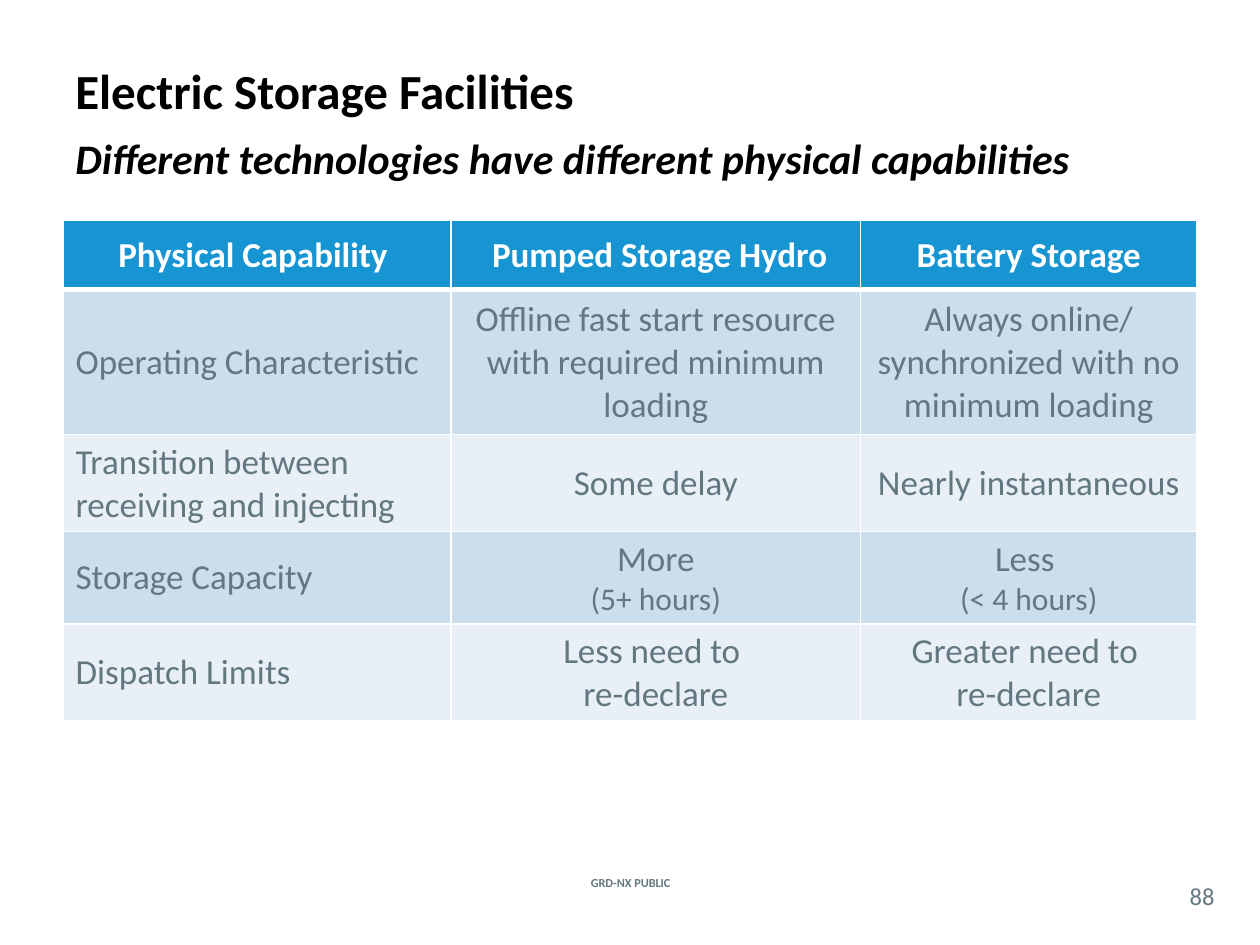
from lxml.etree import SubElement
from pptx import Presentation
from pptx.dml.color import RGBColor
from pptx.enum.text import MSO_ANCHOR, PP_ALIGN
from pptx.oxml.ns import qn
from pptx.util import Inches, Pt

BLACK = RGBColor(0x00, 0x00, 0x00)
WHITE = RGBColor(0xFF, 0xFF, 0xFF)
GRAY = RGBColor(0x62, 0x77, 0x7F)
BLUE = RGBColor(0x17, 0x95, 0xD2)
BANDS = [RGBColor(0xCC, 0xDD, 0xEE), RGBColor(0xE8, 0xEF, 0xF7)]

LEFT, MID = PP_ALIGN.LEFT, PP_ALIGN.CENTER
TOP, CENTER = MSO_ANCHOR.TOP, MSO_ANCHOR.MIDDLE


class Deck:
    """Holds the style and the current slide."""

    face = "Calibri"

    def __init__(self, wide, high):
        self.show = Presentation()
        self.show.slide_width = Inches(wide)
        self.show.slide_height = Inches(high)
        self.slide = self.show.slides.add_slide(self.show.slide_layouts[6])

    def words(self, para, text, align, color, size, **style):
        para.text = text
        para.alignment = align
        form = {"name": self.face, "size": Pt(size), **style}
        for run in para.runs:
            for key, value in form.items():
                setattr(run.font, key, value)
            run.font.color.rgb = color

    def text(self, text, box, size, color, align=LEFT, anchor=CENTER,
             inset=None, **style):
        frame = self.slide.shapes.add_textbox(*map(Inches, box)).text_frame
        form = {"word_wrap": True, "vertical_anchor": anchor}
        if inset is not None:
            for side in ("left", "top", "right", "bottom"):
                form["margin_" + side] = Inches(inset)
        for key, value in form.items():
            setattr(frame, key, value)
        self.words(frame.paragraphs[0], text, align, color, size, **style)

    def edge(self, cell, sides):
        """Draw white borders; sides maps each tag to its width in points."""
        props = cell._tc.get_or_add_tcPr()
        for tag, width in sides.items():
            line = SubElement(props, qn("a:" + tag), w=str(Pt(width)))
            fill = SubElement(line, qn("a:solidFill"))
            SubElement(fill, qn("a:srgbClr"), val=str(WHITE))

    def table(self, left, top, cols, rows, data):
        grid = self.slide.shapes.add_table(
            len(rows), len(cols), Inches(left), Inches(top),
            Inches(sum(cols)), Inches(sum(rows))).table
        grid.horz_banding = False
        for col, wide in zip(grid.columns, cols):
            col.width = Inches(wide)
        for r, (high, items) in enumerate(zip(rows, data)):
            grid.rows[r].height = Inches(high)
            head = r == 0
            for c, item in enumerate(items):
                cell = grid.cell(r, c)
                # Borders come before the fill in the cell properties
                self.edge(cell, {"lnL": 1, "lnR": 1,
                                 "lnT": 3 if r == 1 else 1,
                                 "lnB": 3 if head else 1})
                cell.fill.solid()
                cell.fill.fore_color.rgb = BLUE if head else BANDS[(r - 1) % 2]
                cell.vertical_anchor = CENTER
                # A second paragraph is a smaller note
                parts = [item] if isinstance(item, str) else item
                for n, part in enumerate(parts):
                    frame = cell.text_frame
                    para = frame.add_paragraph() if n else frame.paragraphs[0]
                    self.words(para, part, MID if head or c else LEFT,
                               WHITE if head else GRAY, 18 if n else 20,
                               bold=head)


def main():
    deck = Deck(10, 7.5)

    # Headings
    deck.text("Electric Storage Facilities", (0.5, 0.42, 9, 0.58), 28, BLACK,
              bold=True)
    deck.text("Different technologies have different physical capabilities",
              (0.5, 1, 9, 0.5), 24, BLACK, anchor=TOP, bold=True, italic=True)

    # Comparison table
    deck.table(0.5, 1.75, [3.08, 3.25, 2.67], [0.55, 1.15, 0.68, 0.68, 0.76], [
        ["Physical Capability ", " Pumped Storage Hydro", "Battery Storage"],
        ["Operating Characteristic",
         "Offline fast start resource with required minimum loading",
         "Always online/ synchronized with no minimum loading"],
        ["Transition between receiving and injecting", "Some delay",
         "Nearly instantaneous"],
        ["Storage Capacity", ("More", "(5+ hours)"), ("Less ", "(< 4 hours)")],
        ["Dispatch Limits", "Less need to \nre-declare",
         "Greater need to \nre-declare"],
    ])

    # Footer
    deck.text("GRD-NX PUBLIC", (4.27, 6.92, 1.47, 0.17), 7, GRAY, MID,
              bold=True)
    deck.text("88", (9.33, 6.96, 0.42, 0.29), 14, GRAY, MID, inset=0)

    deck.show.save("out.pptx")


if __name__ == "__main__":
    main()
